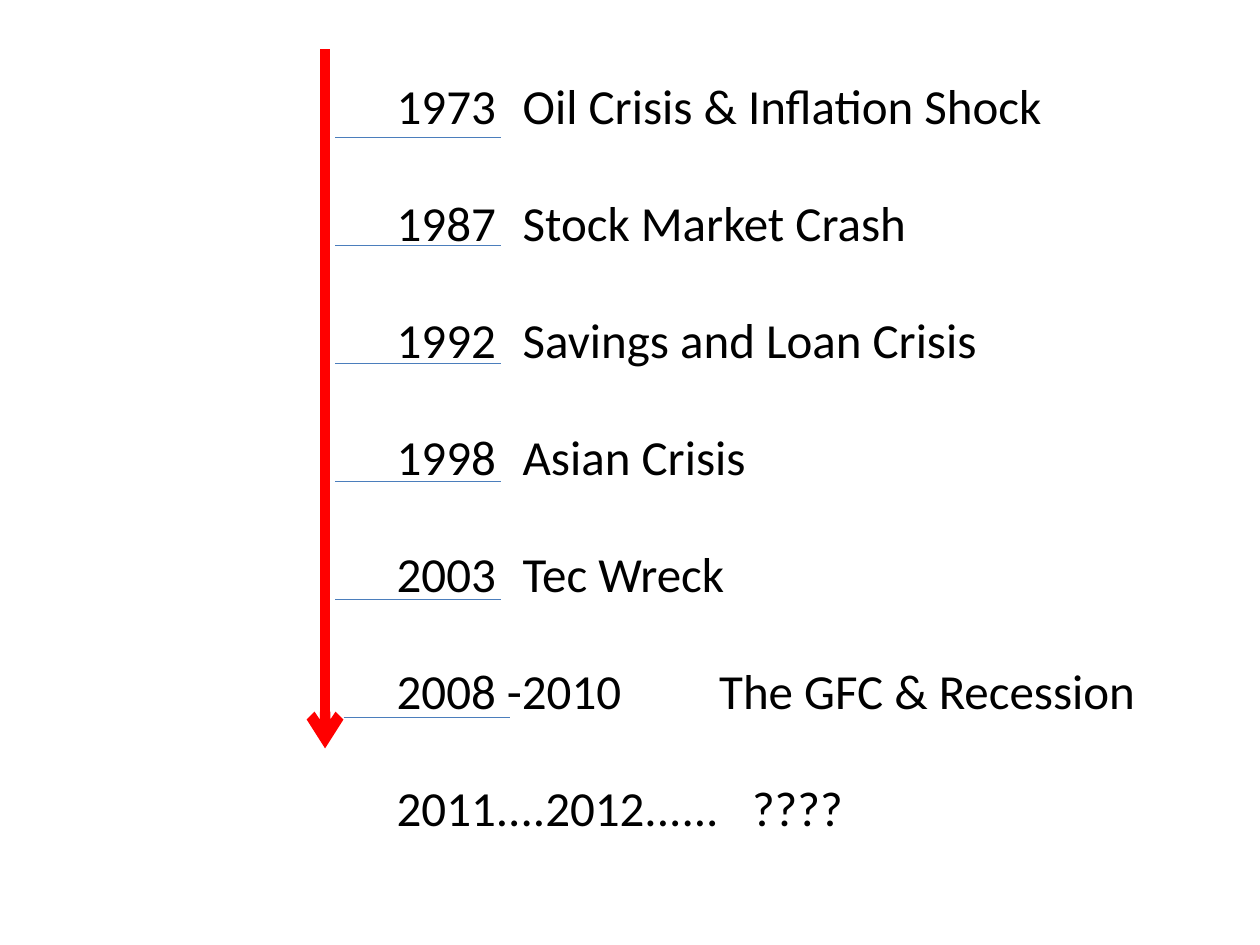
from lxml import etree
from pptx import Presentation, util as u
from pptx.dml.color import RGBColor
from pptx.enum import shapes, text
from pptx.oxml import ns

EVENTS = [
    {"year": "1973", "event": "Oil Crisis & Inflation Shock", "drop": 0.08},
    {"year": "1987", "event": "Stock Market Crash"},
    {"year": "1992", "event": "Savings and Loan Crisis"},
    {"year": "1998", "event": "Asian Crisis"},
    {"year": "2003", "event": "Tec Wreck"},
    {"year": "2008 -2010", "event": "The GFC & Recession", "tab": 2.56, "shift": 0.07},
    {"year": "2011....2012......", "event": "????", "tab": 2.82, "tick": False},
]
THEME = {
    "font": "Calibri", "size": 28, "ink": "000000",
    "arrow": "FF0000", "arrow_width": 6,
    "tick": "4B7EBC", "tick_width": 0.75,
}
WIDTH, HEIGHT = 10, 7.5
ROW = HEIGHT / 8
FIRST_TICK = 1.01
TICK_LEFT, TICK_LENGTH = 2.66, 1.32
AXIS_X, AXIS_TOP, AXIS_BOTTOM = 2.58, 0.39, 5.94
LABELS = (3.05, 0.55, 6.75, 7 * ROW)
TAB = 1
LINE_HEIGHT = 1.22


def add_line(slide, start, end, colour, width):
    line = slide.shapes.add_connector(
        shapes.MSO_CONNECTOR.STRAIGHT, *(u.Inches(v) for v in (*start, *end)))
    line.line.color.rgb = RGBColor.from_string(colour)
    line.line.width = u.Pt(width)
    etree.SubElement(line._element.spPr, ns.qn("a:effectLst"))
    return line


def add_labels(slide):
    frame = slide.shapes.add_textbox(*(u.Inches(v) for v in LABELS)).text_frame
    frame.word_wrap = True
    frame.vertical_anchor = text.MSO_ANCHOR.TOP
    gap = ROW * 72 - THEME["size"] * LINE_HEIGHT
    font_format = {"name": THEME["font"], "size": u.Pt(THEME["size"])}
    for row, entry in enumerate(EVENTS):
        label = frame.add_paragraph() if row else frame.paragraphs[0]
        tabs = etree.SubElement(label._p.get_or_add_pPr(), ns.qn("a:tabLst"))
        etree.SubElement(tabs, ns.qn("a:tab"),
                         pos=str(u.Inches(entry.get("tab", TAB))), algn="l")
        if row:
            label.space_before = u.Pt(round(gap, 1))
        wording = label.add_run()
        wording.text = f"{entry['year']}\t{entry['event']}"
        for key, value in font_format.items():
            setattr(wording.font, key, value)
        wording.font.color.rgb = RGBColor.from_string(THEME["ink"])


def add_axis(slide):
    axis = add_line(slide, (AXIS_X, AXIS_TOP), (AXIS_X, AXIS_BOTTOM),
                    THEME["arrow"], THEME["arrow_width"])
    etree.SubElement(axis.line._get_or_add_ln(), ns.qn("a:tailEnd"), type="arrow")


def add_ticks(slide):
    for row, entry in enumerate(EVENTS):
        if entry.get("tick", True):
            left = TICK_LEFT + entry.get("shift", 0)
            y = FIRST_TICK + row * ROW + entry.get("drop", 0)
            add_line(slide, (left, y), (left + TICK_LENGTH, y),
                     THEME["tick"], THEME["tick_width"])


def main():
    deck = Presentation()
    deck.slide_width, deck.slide_height = u.Inches(WIDTH), u.Inches(HEIGHT)
    timeline = deck.slides.add_slide(deck.slide_layouts[6])
    add_labels(timeline)
    add_axis(timeline)
    add_ticks(timeline)
    deck.save("out.pptx")


if __name__ == "__main__":
    main()
